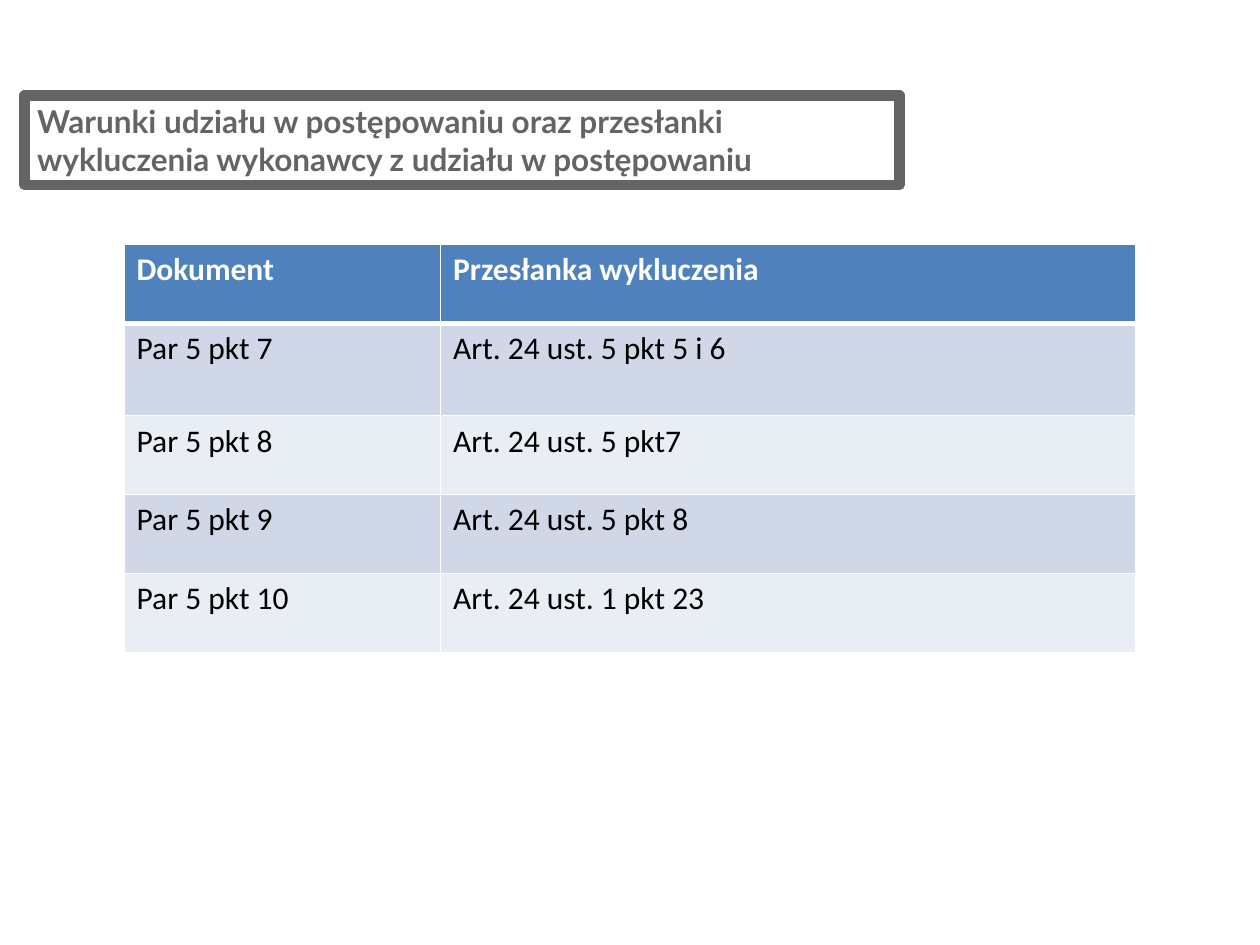
import pptx
import pptx.dml.color
import pptx.enum.shapes
import pptx.enum.text
import pptx.oxml.ns
import pptx.util
from lxml import etree
from pptx.util import Cm, Pt

COLORS = {
    "title": "636466",
    "header": "4F81BD",
    "dark_band": "D0D8E8",
    "light_band": "E9EDF4",
    "white": "FFFFFF",
    "black": "000000",
}
ROWS = [
    ("Dokument", "Przesłanka wykluczenia"),
    ("Par 5 pkt 7", "Art. 24 ust. 5 pkt 5 i 6"),
    ("Par 5 pkt 8", "Art. 24 ust. 5 pkt7"),
    ("Par 5 pkt 9", "Art. 24 ust. 5 pkt 8"),
    ("Par 5 pkt 10", "Art. 24 ust. 1 pkt 23"),
]
COLUMN_WIDTHS = [6.38, 14.02]
ROW_HEIGHTS = [1.59, 1.86, 1.59, 1.59, 1.59]


def rgb(name):
    return pptx.dml.color.RGBColor.from_string(COLORS[name])


def format_text(paragraph, font_name, color, bold):
    for span in paragraph.runs:
        span.font.name = font_name
        span.font.size = Pt(18)
        span.font.bold = bold
        span.font.color.rgb = rgb(color)


def add_title(page, text):
    box = page.shapes.add_shape(
        pptx.enum.shapes.MSO_SHAPE.RECTANGLE,
        Cm(0.5), Cm(1.93), Cm(17.63), Cm(1.8))
    box.shadow.inherit = False
    box.fill.background()
    box.line.color.rgb = rgb("title")
    box.line.width = Pt(6)
    frame = box.text_frame
    frame.word_wrap = True
    frame.vertical_anchor = pptx.enum.text.MSO_ANCHOR.TOP
    frame.text = text
    para = frame.paragraphs[0]
    para.alignment = pptx.enum.text.PP_ALIGN.LEFT
    format_text(para, "Lato", "title", True)


def set_borders(cell, top, bottom):
    """Draw white cell borders, 1 pt at the sides; call before filling the cell."""
    qn = pptx.oxml.ns.qn
    properties = cell._tc.get_or_add_tcPr()
    for side, width in (("L", 1), ("R", 1), ("T", top), ("B", bottom)):
        line = etree.SubElement(properties, qn(f"a:ln{side}"), w=str(Pt(width)))
        fill = etree.SubElement(line, qn("a:solidFill"))
        etree.SubElement(fill, qn("a:srgbClr"), val=COLORS["white"])


def fill_cell(cell, text, row):
    is_header = row == 0
    set_borders(cell, top=3 if row == 1 else 1, bottom=3 if is_header else 1)
    band = "dark_band" if row % 2 else "light_band"
    cell.fill.solid()
    cell.fill.fore_color.rgb = rgb("header" if is_header else band)
    cell.text_frame.text = text
    format_text(cell.text_frame.paragraphs[0], "Calibri",
                "white" if is_header else "black", is_header)


def add_exclusion_table(page):
    table = page.shapes.add_table(
        len(ROWS), len(COLUMN_WIDTHS), Cm(2.5), Cm(4.93),
        Cm(sum(COLUMN_WIDTHS)), Cm(sum(ROW_HEIGHTS))).table
    for column, width in zip(table.columns, COLUMN_WIDTHS):
        column.width = Cm(width)
    for row, (height, texts) in enumerate(zip(ROW_HEIGHTS, ROWS)):
        table.rows[row].height = Cm(height)
        for column, text in enumerate(texts):
            fill_cell(table.cell(row, column), text, row)


def main():
    deck = pptx.Presentation()
    deck.slide_width = Cm(25.4)
    deck.slide_height = Cm(19.05)
    page = deck.slides.add_slide(deck.slide_layouts[6])
    add_title(page, "Warunki udziału w postępowaniu oraz przesłanki "
                    "wykluczenia wykonawcy z udziału w postępowaniu")
    add_exclusion_table(page)
    deck.save("out.pptx")


if __name__ == "__main__":
    main()
